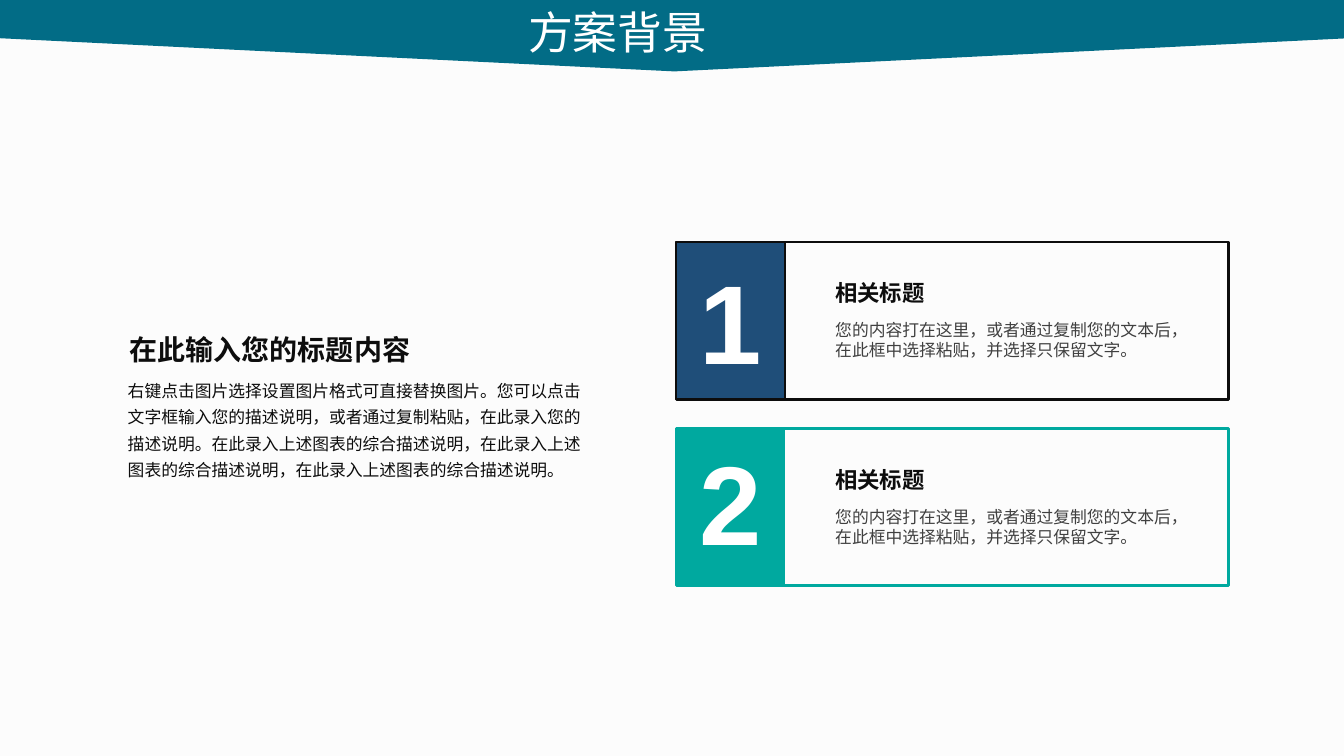
from dataclasses import dataclass

from pptx import Presentation
from pptx.dml.color import RGBColor
from pptx.enum.shapes import MSO_SHAPE
from pptx.enum.text import MSO_ANCHOR, MSO_AUTO_SIZE, PP_ALIGN
from pptx.oxml.ns import qn
from pptx.util import Cm, Pt
from lxml.etree import SubElement


@dataclass(frozen=True)
class Theme:
    background: str = "FCFCFC"
    banner: str = "026C86"
    navy: str = "1F4E79"
    teal: str = "00A99F"
    ink: str = "0D0D0D"
    grey: str = "404040"
    white: str = "FFFFFF"
    heading_font: str = "Noto Sans CJK SC"
    latin_font: str = "Arial"
    card_font: str = "Calibri"
    banner_size: int = 32
    heading_size: int = 20
    card_title_size: int = 16
    body_size: int = 12
    digit_size: int = 80


THEME = Theme()
CARD_TEXT = "您的内容打在这里，或者通过复制您的文本后，在此框中选择粘贴，并选择只保留文字。"
INTRO_TEXT = (
    "右键点击图片选择设置图片格式可直接替换图片。您可以点击文字框输入您的描述说明，"
    "或者通过复制粘贴，在此录入您的描述说明。在此录入上述图表的综合描述说明，"
    "在此录入上述图表的综合描述说明，在此录入上述图表的综合描述说明。"
)


def add_box(slide, left, top, width, height, fill=None, line=None,
            line_width=1, kind=MSO_SHAPE.RECTANGLE):
    shape = slide.shapes.add_shape(kind, Cm(left), Cm(top), Cm(width), Cm(height))
    shape.shadow.inherit = False
    if fill:
        shape.fill.solid()
        shape.fill.fore_color.rgb = RGBColor.from_string(fill)
    else:
        shape.fill.background()
    if line:
        shape.line.color.rgb = RGBColor.from_string(line)
        shape.line.width = Pt(line_width)
    else:
        shape.line.fill.background()
    return shape


def add_text(slide, text, left, top, width, height, *, size, color, font,
             bold=False, align=PP_ALIGN.LEFT, anchor=MSO_ANCHOR.TOP, wrap=True,
             insets=(0.25, 0.13), line_spacing=None, before=0, after=0):
    box = slide.shapes.add_textbox(Cm(left), Cm(top), Cm(width), Cm(height))
    frame = box.text_frame
    frame.word_wrap = wrap
    frame.auto_size = MSO_AUTO_SIZE.SHAPE_TO_FIT_TEXT
    frame.vertical_anchor = anchor
    frame.margin_left = frame.margin_right = Cm(insets[0])
    frame.margin_top = frame.margin_bottom = Cm(insets[1])
    paragraph = frame.paragraphs[0]
    paragraph.alignment = align
    paragraph.line_spacing = line_spacing
    paragraph.space_before = Pt(before)
    paragraph.space_after = Pt(after)
    run = paragraph.add_run()
    run.text = text
    run.font.size = Pt(size)
    run.font.bold = bold
    run.font.name = font
    run.font.color.rgb = RGBColor.from_string(color)
    # East Asian typeface for the Chinese characters
    SubElement(run._r.get_or_add_rPr(), qn("a:ea")).set("typeface", THEME.heading_font)


def add_banner(slide, left, top, width, height):
    # A pentagon turned to point down, so its own width and height are swapped
    shape = add_box(slide, left + (width - height) / 2, top + (height - width) / 2,
                    height, width, fill=THEME.banner, kind=MSO_SHAPE.PENTAGON)
    shape.adjustments[0] = 0.464
    shape.rotation = 90
    add_text(slide, "方案背景", left + 13.06, top, 7.75, 1.63, size=THEME.banner_size,
             color=THEME.white, font=THEME.heading_font, align=PP_ALIGN.JUSTIFY)


def add_intro(slide, left, top, width):
    add_text(slide, INTRO_TEXT, left, top + 1.09, width, 2.87, size=THEME.body_size,
             color=THEME.ink, font=THEME.latin_font, insets=(0.2, 0.1),
             line_spacing=1.3, after=4)
    add_text(slide, "在此输入您的标题内容", left, top, 8.48, 1.12,
             size=THEME.heading_size, color=THEME.ink, font=THEME.heading_font, bold=True)


def add_card(slide, left, top, width, height, digit, digit_top, fill, frame_line, tab_line):
    # Frame and coloured number tab
    add_box(slide, left, top, width, height, line=frame_line, line_width=2)
    add_box(slide, left, top, 2.74, height, fill=fill, line=tab_line)
    add_text(slide, digit, left + 0.58, top + digit_top, 1.57, 3.43,
             size=THEME.digit_size, color=THEME.white, font=THEME.latin_font, bold=True,
             align=PP_ALIGN.CENTER, anchor=MSO_ANCHOR.MIDDLE, wrap=False,
             insets=(0, 0), before=12)
    # Title and description
    text_left = left + 3.76
    add_text(slide, CARD_TEXT, text_left, top + 1.83, 9.68, 1.27,
             size=THEME.body_size, color=THEME.grey, font=THEME.card_font)
    add_text(slide, "相关标题", text_left, top + 0.81, 2.79, 0.94,
             size=THEME.card_title_size, color=THEME.ink, font=THEME.heading_font,
             bold=True, wrap=False)


def main():
    presentation = Presentation()
    presentation.slide_width = Cm(33.87)
    presentation.slide_height = Cm(19.05)
    slide = presentation.slides.add_slide(presentation.slide_layouts[6])
    slide.background.fill.solid()
    slide.background.fill.fore_color.rgb = RGBColor.from_string(THEME.background)

    add_banner(slide, 0, 0, 33.99, 1.8)
    add_intro(slide, 3.02, 8.26, 12.22)
    cards = [
        ("1", 0.25, THEME.navy, THEME.ink, THEME.ink),
        ("2", 0.1, THEME.teal, THEME.teal, None),
    ]
    for index, card in enumerate(cards):
        add_card(slide, 17.04, 6.1 + 4.7 * index, 13.92, 3.96, *card)
    presentation.save("out.pptx")


if __name__ == "__main__":
    main()
